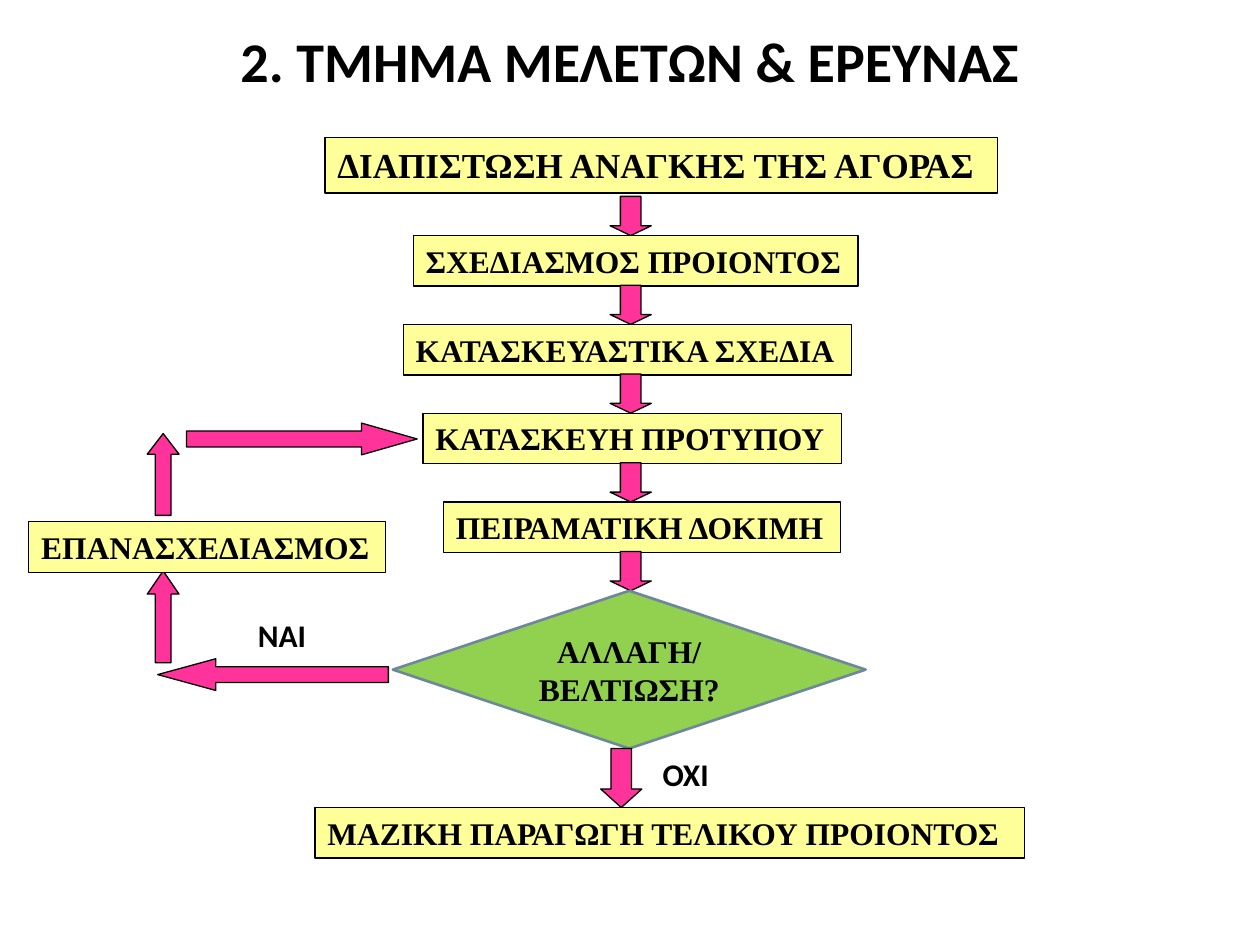
from pptx import Presentation
from pptx.dml.color import RGBColor
from pptx.enum.shapes import MSO_SHAPE
from pptx.enum.text import MSO_ANCHOR, PP_ALIGN
from pptx.util import Cm, Pt

RECT, DECISION = MSO_SHAPE.RECTANGLE, MSO_SHAPE.FLOWCHART_DECISION
DOWN, UP = MSO_SHAPE.DOWN_ARROW, MSO_SHAPE.UP_ARROW
LEFT, RIGHT = MSO_SHAPE.LEFT_ARROW, MSO_SHAPE.RIGHT_ARROW
TOP, MIDDLE = MSO_ANCHOR.TOP, MSO_ANCHOR.MIDDLE
ALIGN_LEFT, CENTER = PP_ALIGN.LEFT, PP_ALIGN.CENTER

BLACK, YELLOW, PINK = "000000", "FFFF99", "FF3399"
GREEN, SLATE = "92D050", "6D879B"
SERIF, SANS = "Times New Roman", "Calibri"

# Main column, in centimetres
STEP_TOP, STEP_PITCH, STEP_HEIGHT = 4.75, 1.79, 1.02
ARROW_LEFT, ARROW_WIDTH, ARROW_HEIGHT = 12.3, 0.83, 0.79
STEPS = [  # text, left, width
    ("ΣΧΕΔΙΑΣΜΟΣ ΠΡΟΙΟΝΤΟΣ", 8.33, 8.97),
    ("ΚΑΤΑΣΚΕΥΑΣΤΙΚΑ ΣΧΕΔΙΑ", 8.13, 9.04),
    ("ΚΑΤΑΣΚΕΥΗ ΠΡΟΤΥΠΟΥ", 8.53, 8.43),
    ("ΠΕΙΡΑΜΑΤΙΚΗ ΔΟΚΙΜΗ", 8.94, 8.0),
]


def rgb(color):
    return RGBColor.from_string(color)


def apply(target, formats):
    for attribute, value in formats.items():
        setattr(target, attribute, value)


def write(frame, lines, size=18, font=SERIF, align=ALIGN_LEFT, anchor=TOP):
    apply(frame, {"word_wrap": True, "vertical_anchor": anchor})
    frame.text = "\n".join(lines)
    for paragraph in frame.paragraphs:
        paragraph.alignment = align
        for run in paragraph.runs:
            apply(run.font, {"name": font, "size": Pt(size), "bold": True})
            run.font.color.rgb = rgb(BLACK)


def add_outlined(slide, kind, place, fill, line=BLACK, weight=0.75):
    shape = slide.shapes.add_shape(kind, *map(Cm, place))
    shape.shadow.inherit = False
    shape.fill.solid()
    shape.fill.fore_color.rgb = rgb(fill)
    shape.line.color.rgb = rgb(line)
    shape.line.width = Pt(weight)
    return shape


def add_step(slide, text, left, top, width, height=STEP_HEIGHT, size=18):
    step = add_outlined(slide, RECT, (left, top, width, height), YELLOW)
    write(step.text_frame, [text], size)


def add_arrow(slide, kind, place, head=0.25):
    arrow = add_outlined(slide, kind, place, PINK)
    arrow.adjustments[0] = 0.5
    arrow.adjustments[1] = head


def add_answer(slide, text, left, top, width):
    answer = slide.shapes.add_textbox(Cm(left), Cm(top), Cm(width), Cm(STEP_HEIGHT))
    write(answer.text_frame, [text], font=SANS)


def add_title(slide, text):
    title = slide.shapes.title
    apply(title, {"left": Cm(0.79), "top": Cm(0.4),
                  "width": Cm(23.82), "height": Cm(3)})
    write(title.text_frame, [text], 32, SANS, CENTER)


def add_main_column(slide):
    add_step(slide, "ΔΙΑΠΙΣΤΩΣΗ ΑΝΑΓΚΗΣ ΤΗΣ ΑΓΟΡΑΣ", 6.55, 2.77, 13.56, 1.12, 20)
    # Each arrow ends on the top edge of the next step
    for index in range(len(STEPS) + 1):
        top = STEP_TOP + index * STEP_PITCH
        add_arrow(slide, DOWN, (ARROW_LEFT, top - ARROW_HEIGHT,
                                ARROW_WIDTH, ARROW_HEIGHT))
        if index < len(STEPS):
            text, left, width = STEPS[index]
            add_step(slide, text, left, top, width)

    # Decision and final step
    decision = add_outlined(slide, DECISION, (7.92, 11.91, 9.53, 3.18),
                            GREEN, SLATE, 1.5)
    write(decision.text_frame, ["ΑΛΛΑΓΗ/", "ΒΕΛΤΙΩΣΗ?"],
          align=CENTER, anchor=MIDDLE)
    add_arrow(slide, DOWN, (12.11, 15.09, ARROW_WIDTH, 1.19), 0.45)
    add_answer(slide, "ΟΧΙ", 13.11, 15.09, 1.6)
    add_step(slide, "ΜΑΖΙΚΗ ΠΑΡΑΓΩΓΗ ΤΕΛΙΚΟΥ ΠΡΟΙΟΝΤΟΣ", 6.35, 16.28, 14.3)


def add_redesign_loop(slide):
    add_arrow(slide, LEFT, (3.18, 13.28, 4.65, 0.64), 1.83)
    add_arrow(slide, UP, (2.97, 11.51, 0.64, 1.85), 0.73)
    add_step(slide, "ΕΠΑΝΑΣΧΕΔΙΑΣΜΟΣ", 0.58, 10.52, 7.19)
    add_arrow(slide, UP, (2.97, 8.74, 0.64, 1.65), 0.65)
    add_arrow(slide, RIGHT, (3.76, 8.53, 4.65, 0.64), 1.75)
    add_answer(slide, "ΝΑΙ", 4.95, 12.29, 2.18)


def main():
    deck = Presentation()
    apply(deck, {"slide_width": Cm(25.4), "slide_height": Cm(19.05)})
    slide = deck.slides.add_slide(deck.slide_layouts[5])
    add_title(slide, "2. ΤΜΗΜΑ ΜΕΛΕΤΩΝ & ΕΡΕΥΝΑΣ")
    add_main_column(slide)
    add_redesign_loop(slide)
    deck.save("out.pptx")


if __name__ == "__main__":
    main()
